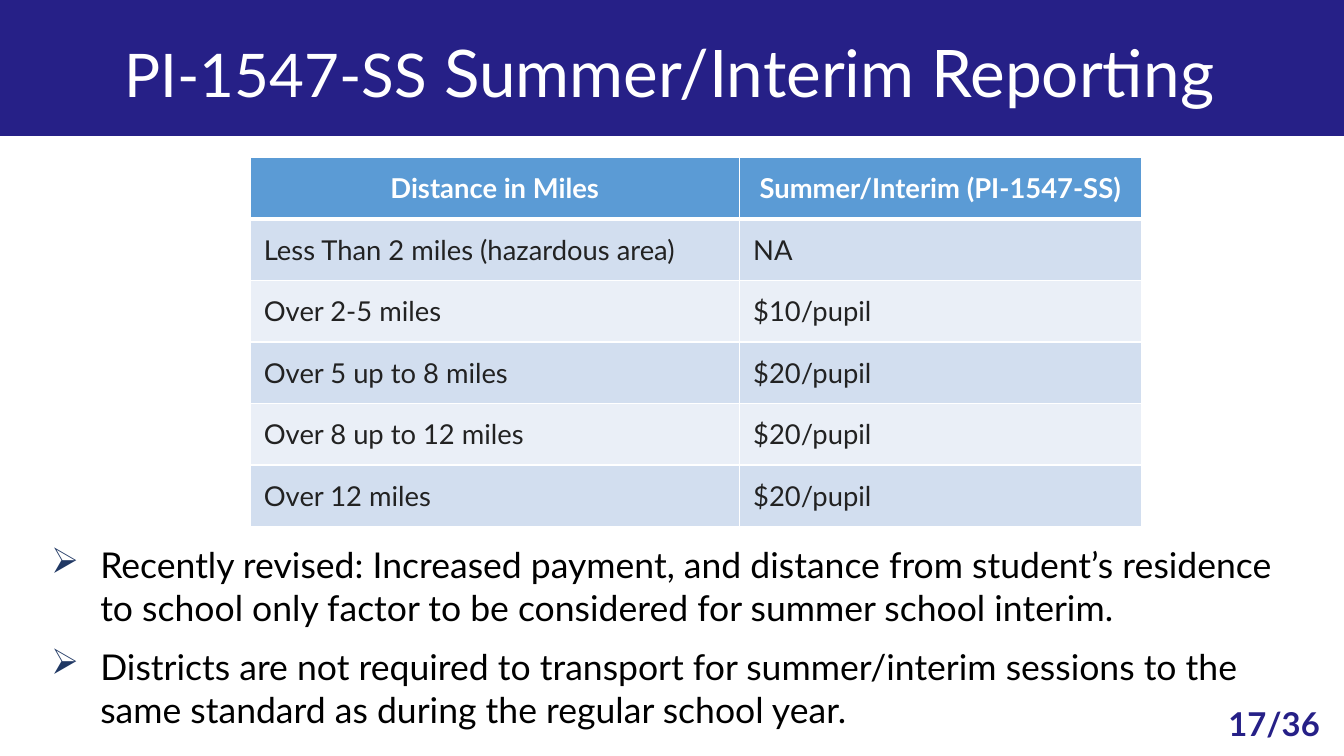
from lxml.etree import SubElement as Sub
from pptx import Presentation as Deck
from pptx.dml.color import RGBColor as RGB
from pptx.enum.shapes import MSO_SHAPE as Shape
from pptx.enum.text import MSO_ANCHOR as Anchor, MSO_AUTO_SIZE as Fit, PP_ALIGN as Align
from pptx.oxml.ns import qn
from pptx.util import Pt

NAVY = RGB(0x26, 0x20, 0x87)
WHITE = RGB(0xFF, 0xFF, 0xFF)
BLACK = RGB(0, 0, 0)
INK = RGB(0x22, 0x22, 0x22)
BLUE = RGB(0x5B, 0x9B, 0xD5)
MID = RGB(0xD2, 0xDE, 0xEF)
PALE = RGB(0xEA, 0xEF, 0xF7)
MARK = RGB(0x20, 0x38, 0x64)

PX = 9144
WIDE, HIGH = 1365, 768

ROWS = [
    ("Distance in Miles", "Summer/Interim (PI-1547-SS)"),
    ("Less Than 2 miles (hazardous area)", "NA"),
    ("Over 2-5 miles", "$10/pupil"),
    ("Over 5 up to 8 miles", "$20/pupil"),
    ("Over 8 up to 12 miles", "$20/pupil"),
    ("Over 12 miles", "$20/pupil"),
]
NOTES = [
    "Recently revised: Increased payment, and distance from student’s residence "
    "to school only factor to be considered for summer school interim.",
    "Districts are not required to transport for summer/interim sessions to the "
    "same standard as during the regular school year.",
]


def px(*sizes):
    return [size * PX for size in sizes]


class Page:
    face = "Lato"

    def __init__(self, deck):
        self.slide = deck.slides.add_slide(deck.slide_layouts[5])
        self.shapes = self.slide.shapes

    def style(self, font, size, color, bold=False):
        font.name, font.size, font.bold = self.face, Pt(size), bold
        font.color.rgb = color

    def band(self, box, color):
        bar = self.shapes.add_shape(Shape.RECTANGLE, *px(*box))
        bar.shadow.inherit = False
        bar.fill.solid()
        bar.fill.fore_color.rgb = color
        bar.line.fill.background()

    def title(self, box, parts, color):
        head = self.shapes.title
        head.left, head.top, head.width, head.height = px(*box)
        self.shapes._spTree.append(head._element)
        frame = head.text_frame
        frame.auto_size = Fit.NONE
        frame.vertical_anchor = Anchor.MIDDLE
        para = frame.paragraphs[0]
        para.alignment = Align.CENTER
        for text, size in parts:
            run = para.add_run()
            run.text = text
            self.style(run.font, size, color)

    def text(self, box, lines, size, color, bold=False, align=Align.LEFT, mark=None):
        frame = self.shapes.add_textbox(*px(*box)).text_frame
        frame.word_wrap = True
        for i, line in enumerate(lines):
            para = frame.paragraphs[0] if i == 0 else frame.add_paragraph()
            para.text = line
            para.alignment = align
            if mark:
                self.bullet(para, mark)
            if i:
                para.space_before = Pt(12)
            self.style(para.font, size, color, bold)

    def bullet(self, para, color):
        props = para._p.get_or_add_pPr()
        props.set("marL", str(50 * PX))
        props.set("indent", str(-50 * PX))
        Sub(Sub(props, qn("a:buClr")), qn("a:srgbClr"), val=str(color))
        Sub(props, qn("a:buChar"), char="➢")

    def edge(self, cell, side, width, color):
        line = Sub(cell._tc.get_or_add_tcPr(), qn("a:ln" + side), w=str(Pt(width)))
        Sub(Sub(line, qn("a:solidFill")), qn("a:srgbClr"), val=str(color))

    def cell(self, cell, text, row):
        head = row == 0
        for side in "LRTB":
            thick = (row, side) in ((0, "B"), (1, "T"))
            self.edge(cell, side, 3 if thick else 1, WHITE)
        cell.fill.solid()
        cell.fill.fore_color.rgb = BLUE if head else MID if row % 2 else PALE
        cell.vertical_anchor = Anchor.MIDDLE
        cell.margin_left = cell.margin_right = 14 * PX
        cell.margin_top = cell.margin_bottom = 7 * PX
        cell.text = text
        para = cell.text_frame.paragraphs[0]
        para.alignment = Align.CENTER if head else Align.LEFT
        self.style(para.font, 20, WHITE if head else INK, head)

    def table(self, left, top, cols, high, rows):
        box = px(left, top, sum(cols), high)
        grid = self.shapes.add_table(len(rows), len(cols), *box).table
        for col, width in zip(grid.columns, cols):
            col.width = width * PX
        for r, row in enumerate(rows):
            grid.rows[r].height = high * PX // len(rows)
            for c, text in enumerate(row):
                self.cell(grid.cell(r, c), text, r)


def main():
    deck = Deck()
    deck.slide_width, deck.slide_height = px(WIDE, HIGH)
    page = Page(deck)
    page.band((0, 0, WIDE, 138), NAVY)
    page.text((1233, 710, 122, 50), ["17/36"], 24, NAVY, True, Align.CENTER)
    page.title((80, 3, 1200, 138),
               [("PI-1547-SS", 44), (" Summer/Interim Reporting", 48)], WHITE)
    page.text((42, 547, 1281, 202), NOTES, 26, BLACK, mark=MARK)
    page.table(254, 160, (497, 408), 375, ROWS)
    deck.save("out.pptx")


if __name__ == "__main__":
    main()
